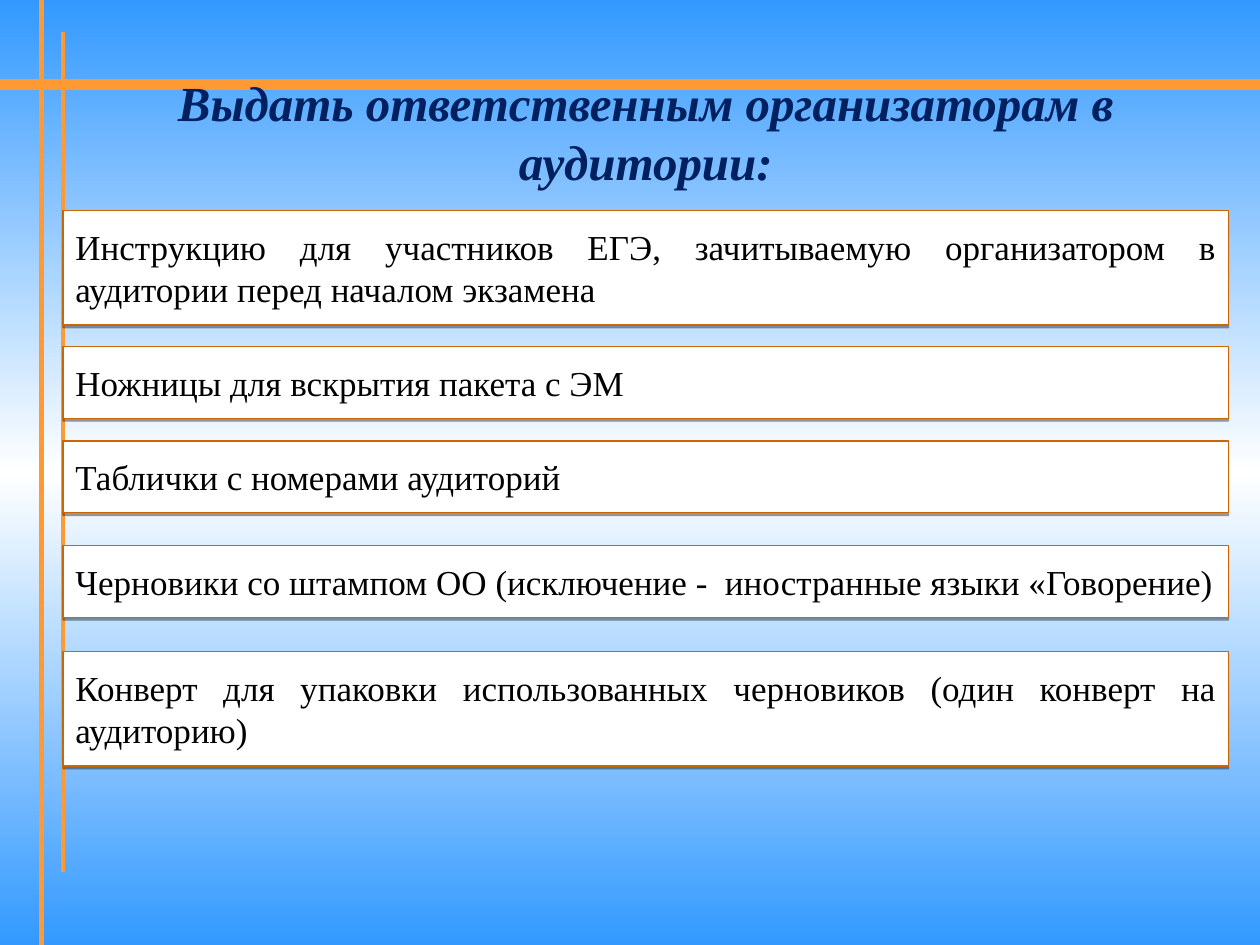
from copy import deepcopy

from lxml import etree
from pptx import Presentation
from pptx.dml.color import RGBColor
from pptx.enum.shapes import MSO_CONNECTOR, MSO_SHAPE
from pptx.enum.text import MSO_ANCHOR, MSO_AUTO_SIZE, PP_ALIGN
from pptx.oxml.ns import qn
from pptx.util import Inches, Pt

STRAIGHT = MSO_CONNECTOR.STRAIGHT
RECTANGLE = MSO_SHAPE.RECTANGLE
MIDDLE = MSO_ANCHOR.MIDDLE
NO_FIT, GROW = MSO_AUTO_SIZE.NONE, MSO_AUTO_SIZE.SHAPE_TO_FIT_TEXT
CENTER, JUSTIFY = PP_ALIGN.CENTER, PP_ALIGN.JUSTIFY
LEFT, WIDTH = Inches(0.5), Inches(9.25)


def rgb(value):
    return RGBColor.from_string(value)


def write(frame, text, size, color, align, fit, bold=False, italic=False):
    frame.word_wrap = True
    frame.auto_size = fit
    frame.vertical_anchor = MIDDLE
    paragraph = frame.paragraphs[0]
    paragraph.alignment = align
    run = paragraph.add_run()
    run.text = text
    run.font.name = "Times New Roman"
    run.font.size = Pt(size)
    run.font.bold = bold
    run.font.italic = italic
    run.font.color.rgb = rgb(color)


prs = Presentation()
prs.slide_width, prs.slide_height = Inches(10), Inches(7.5)
slide = prs.slides.add_slide(prs.slide_layouts[5])
shapes = slide.shapes

# Background: blue at both ends, white in the middle
sky = slide.background.fill
sky.gradient()
sky.gradient_angle = 90
stop_list = slide.element.find(".//" + qn("a:gsLst"))
stop_list.append(deepcopy(stop_list[0]))
for stop, position, color in zip(
    sky.gradient_stops, (0, 0.5, 1), ("3399FF", "FFFFFF", "3399FF")
):
    stop.position = position
    stop.color.rgb = rgb(color)

# Orange rules
for x1, y1, x2, y2, weight in (
    (0, 0.67, 10, 0.67, 6),
    (0.33, 0, 0.33, 7.5, 3),
    (0.5, 0.25, 0.5, 6.92, 2.25),
):
    rule = shapes.add_connector(
        STRAIGHT, Inches(x1), Inches(y1), Inches(x2), Inches(y2)
    )
    rule.line.color.rgb = rgb("FF9933")
    rule.line.width = Pt(weight)
    etree.SubElement(rule.element.spPr, qn("a:effectLst"))

# Title, brought in front of the rules
title = shapes.title
title.left, title.top = LEFT, Inches(0.92)
title.width, title.height = WIDTH, Inches(0.25)
write(title.text_frame, "Выдать ответственным организаторам в аудитории:",
      28, "002060", CENTER, NO_FIT, bold=True, italic=True)
shapes.element.append(title.element)

# Items to hand out
for top, height, item in (
    (1.67, 0.91, "Инструкцию для участников ЕГЭ, зачитываемую организатором "
                 "в аудитории перед началом экзамена"),
    (2.75, 0.57, "Ножницы для вскрытия пакета с ЭМ"),
    (3.5, 0.57, "Таблички с номерами аудиторий"),
    (4.33, 0.57, "Черновики со штампом ОО (исключение -  иностранные языки "
                 "«Говорение)"),
    (5.17, 0.91, "Конверт для упаковки использованных черновиков "
                 "(один конверт на аудиторию)"),
):
    card = shapes.add_shape(RECTANGLE, LEFT, Inches(top), WIDTH, Inches(height))
    card.fill.solid()
    card.fill.fore_color.rgb = rgb("FFFFFF")
    card.line.color.rgb = rgb("CC6600")
    card.line.width = Pt(0.75)

    card.shadow.inherit = False
    effects = card.element.spPr.find(qn("a:effectLst"))
    shadow = etree.SubElement(effects, qn("a:outerShdw"), blurRad="0",
                              dist=str(Pt(1.6)), dir="5400000", rotWithShape="0")
    shade = etree.SubElement(shadow, qn("a:srgbClr"), val="000000")
    etree.SubElement(shade, qn("a:alpha"), val="38000")

    frame = card.text_frame
    frame.margin_left = frame.margin_right = Inches(0.1)
    frame.margin_top = frame.margin_bottom = Inches(0.12)
    write(frame, item, 20, "000000", JUSTIFY, GROW)

prs.save("out.pptx")
